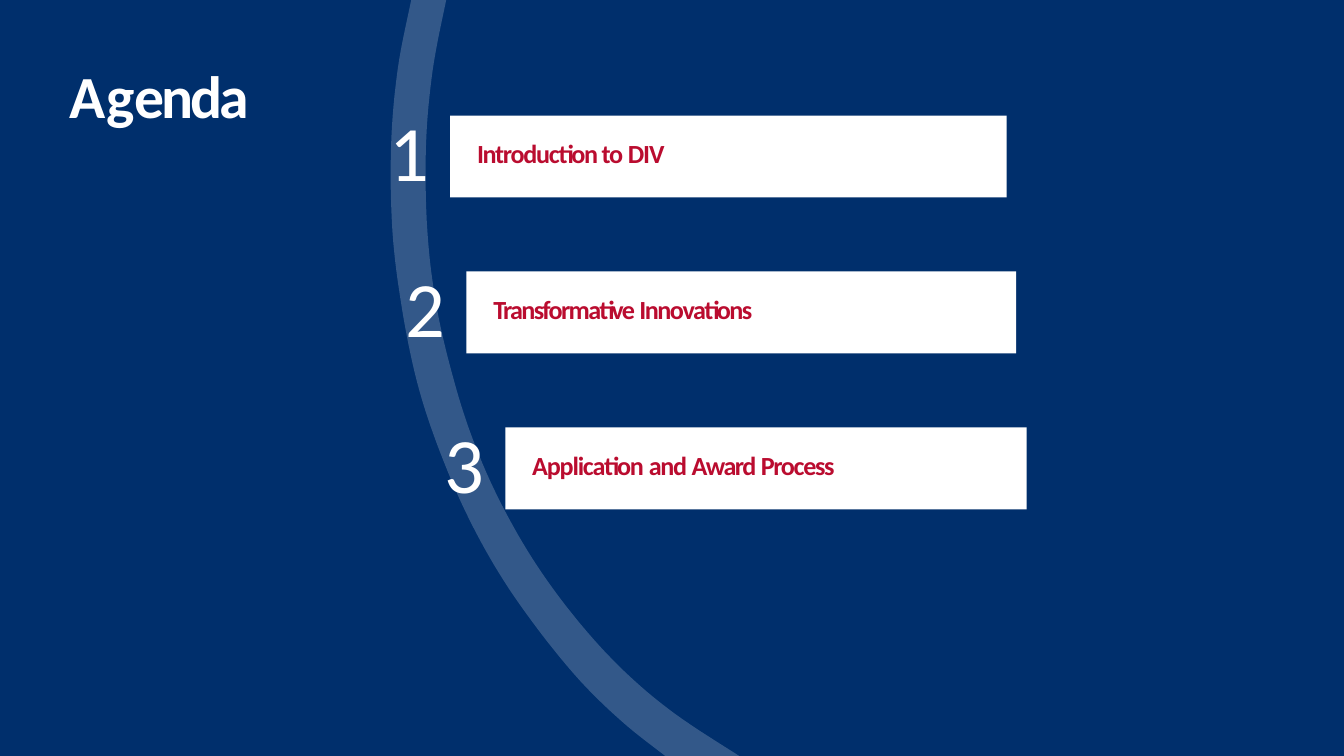
from lxml import etree
from pptx import Presentation
from pptx.dml.color import RGBColor
from pptx.enum.shapes import MSO_SHAPE
from pptx.enum.text import MSO_ANCHOR, PP_ALIGN
from pptx.oxml.ns import qn
from pptx.util import Inches, Pt

RECTANGLE = MSO_SHAPE.RECTANGLE
TOP, LEFT = MSO_ANCHOR.TOP, PP_ALIGN.LEFT

NAVY = RGBColor(0x00, 0x2F, 0x6C)
WHITE = RGBColor(0xFF, 0xFF, 0xFF)
RED = RGBColor(0xBA, 0x0C, 0x2F)

WIDTH = 10
HEIGHT = WIDTH * 9 / 16
FIRST_ROW, ROW_PITCH, CARD_HEIGHT = 0.86, 1.16, 0.61

# Each item: card left, card width, text pieces with their letter spacing
AGENDA = [
    (3.35, 4.14, [("Introduction to ", -0.7), ("DIV", -0.6)]),
    (3.47, 4.09, [("Transformative ", -0.9), ("Innovations", -0.8)]),
    (3.76, 3.88, [("Application ", -0.65), ("and ", -0.75),
                  ("Award ", -0.85), ("Process", -0.75)]),
]

# Points that the two edges of the arc pass through, top to bottom
OUTER_EDGE = [(3.06, 0), (2.96, 0.51), (2.91, 1.08), (2.92, 1.72), (2.99, 2.29),
              (3.1, 2.83), (3.25, 3.3), (3.46, 3.8), (3.71, 4.26), (4, 4.68),
              (4.32, 5.07), (4.64, 5.38), (4.95, HEIGHT)]
INNER_EDGE = [(3.32, 0), (3.22, 0.52), (3.17, 1.08), (3.18, 1.72), (3.25, 2.29),
              (3.38, 2.84), (3.53, 3.3), (3.73, 3.75), (3.99, 4.2), (4.3, 4.62),
              (4.64, 4.99), (5.02, 5.31), (5.5, HEIGHT)]


def add_text(slide, box, pieces, size, color, bold=False):
    """Place one line of text; pieces are (text, letter spacing in points)."""
    shape = slide.shapes.add_textbox(*(Inches(length) for length in box))
    frame = shape.text_frame
    frame.word_wrap = True
    frame.vertical_anchor = TOP
    frame.margin_left = frame.margin_right = frame.margin_bottom = 0
    frame.margin_top = Inches(0.01)
    paragraph = frame.paragraphs[0]
    paragraph.alignment = LEFT
    for text, spacing in pieces:
        run = paragraph.add_run()
        run.text = text
        run.font.name = "Calibri"
        run.font.size = Pt(size)
        run.font.bold = bold
        run.font.color.rgb = color
        if spacing:
            run.font._element.set("spc", str(round(spacing * 100)))


def add_agenda_item(slide, box, number, pieces):
    """Place a white card with its text, and the number to its left."""
    left, top, width, height = box
    card = slide.shapes.add_shape(RECTANGLE, *(Inches(length) for length in box))
    card.shadow.inherit = False
    card.fill.solid()
    card.fill.fore_color.rgb = WHITE
    card.line.fill.background()
    add_text(slide, (left + 0.2, top + height / 4, width - 0.2, 0.26),
             pieces, 14, RED, bold=True)
    add_text(slide, (left - 0.45, top - 0.1, 0.32, 0.73), [(str(number), 0)], 42, WHITE)


def smooth_curve(knots, steps=8):
    """Return points on a Catmull-Rom curve through the knots."""
    padded = [knots[0], *knots, knots[-1]]
    points = []
    for a, b, c, d in zip(padded, padded[1:], padded[2:], padded[3:]):
        for step in range(steps):
            t = step / steps
            points.append(tuple(
                q + t / 2 * (r - p + t * (2 * p - 5 * q + 4 * r - s
                                          + t * (3 * (q - r) + s - p)))
                for p, q, r, s in zip(a, b, c, d)))
    return points + [knots[-1]]


def add_arc(slide):
    """Draw the translucent band that sweeps down the slide."""
    edges = smooth_curve(OUTER_EDGE) + smooth_curve(INNER_EDGE)[::-1]
    outline = [(Inches(x), Inches(y)) for x, y in edges]
    builder = slide.shapes.build_freeform(*outline[0])
    builder.add_line_segments(outline[1:], close=True)
    arc = builder.convert_to_shape()
    arc.shadow.inherit = False
    arc.fill.solid()
    arc.fill.fore_color.rgb = WHITE
    arc.line.fill.background()
    color = arc._element.spPr.find(qn("a:solidFill"))[0]
    etree.SubElement(color, qn("a:alpha")).set("val", "20000")


def main():
    presentation = Presentation()
    presentation.slide_width = Inches(WIDTH)
    presentation.slide_height = Inches(HEIGHT)
    slide = presentation.slides.add_slide(presentation.slide_layouts[6])
    slide.background.fill.solid()
    slide.background.fill.fore_color.rgb = NAVY

    # Title
    add_text(slide, (0.52, 0.43, 1.59, 0.56),
             [("A", -1.4), ("g", -1.5), ("enda", -1.6)], 32, WHITE, bold=True)

    # Agenda rows
    for row, (left, width, pieces) in enumerate(AGENDA):
        box = (left, FIRST_ROW + row * ROW_PITCH, width, CARD_HEIGHT)
        add_agenda_item(slide, box, row + 1, pieces)

    # Arc, in front of the numbers
    add_arc(slide)
    presentation.save("out.pptx")


if __name__ == "__main__":
    main()
